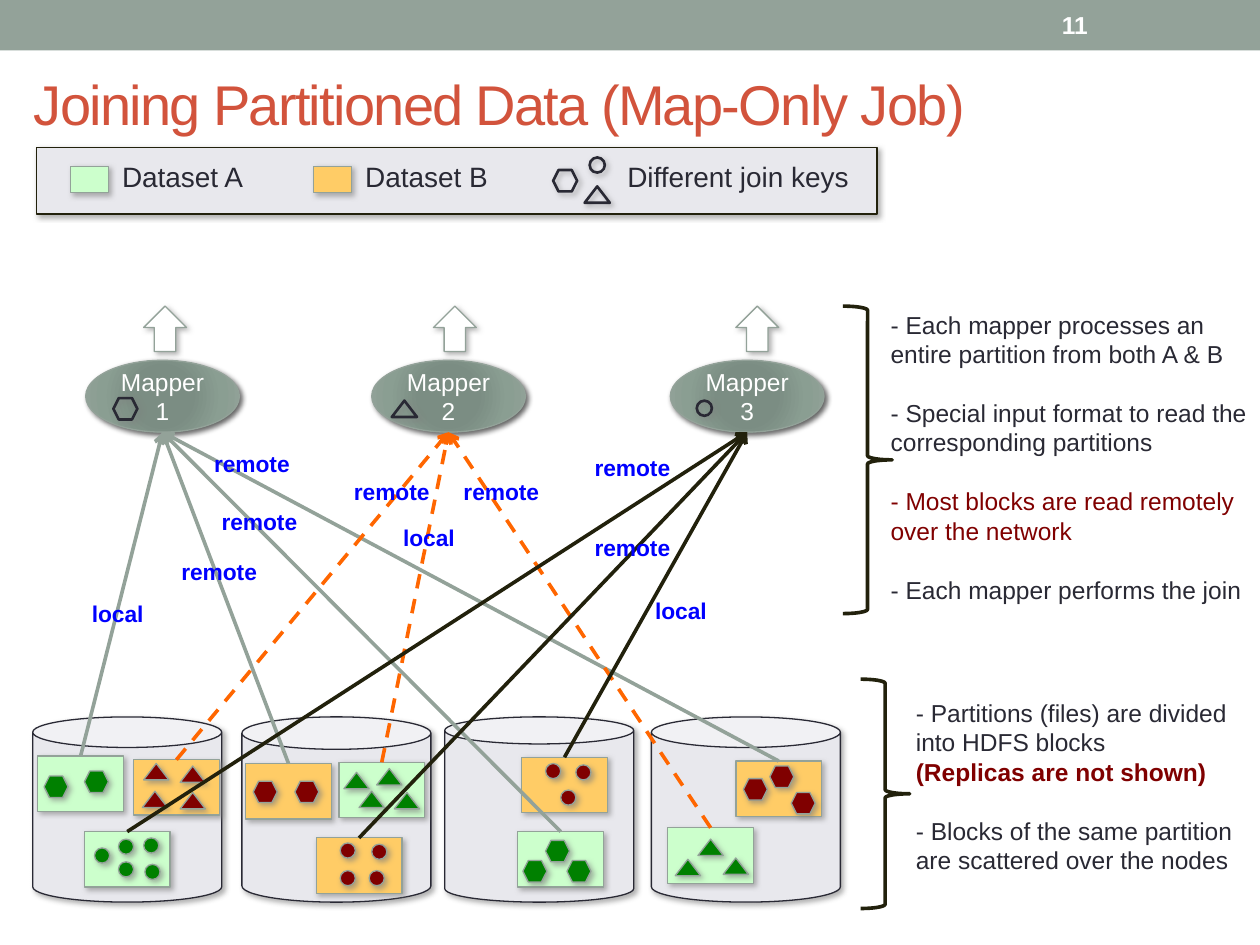
from pptx import Presentation
from pptx.dml.color import RGBColor
from pptx.enum.dml import MSO_LINE
from pptx.enum.shapes import MSO_CONNECTOR, MSO_SHAPE
from pptx.enum.text import MSO_ANCHOR, PP_ALIGN
from pptx.oxml import parse_xml
from pptx.oxml.ns import nsdecls, qn
from pptx.util import Inches, Pt

GRAY, DARK, INK = "93A299", "22210C", "292934"
PANEL, MAROON, WHITE = "E8E8ED", "800000", "FFFFFF"
DATASETS = {"A": ("CCFFCC", "008000"), "B": ("FFCC66", MAROON)}
HEX, TRI, DOT = MSO_SHAPE.HEXAGON, MSO_SHAPE.ISOSCELES_TRIANGLE, MSO_SHAPE.OVAL
KEY_SIZES = {HEX: (0.19, 0.17), TRI: (0.2, 0.13), DOT: (0.12, 0.12)}

prs = Presentation()
prs.slide_width, prs.slide_height = Inches(10), Inches(7.5)
slide = prs.slides.add_slide(prs.slide_layouts[6])


def add_shape(kind, x, y, w, h, fill=None, line=GRAY, width=0.75, shadow="808080"):
    """Draw a preset shape; None leaves out its fill, line or shadow."""
    s = slide.shapes.add_shape(kind, Inches(x), Inches(y), Inches(w), Inches(h))
    if fill:
        s.fill.solid()
        s.fill.fore_color.rgb = RGBColor.from_string(fill)
    else:
        s.fill.background()
    if line:
        s.line.color.rgb = RGBColor.from_string(line)
        s.line.width = Pt(width)
    else:
        s.line.fill.background()
    s.shadow.inherit = False
    if shadow:
        s._element.spPr.find(qn("a:effectLst")).append(parse_xml(
            f'<a:outerShdw {nsdecls("a")} blurRad="38100" dist="25400" dir="2700000" '
            f'rotWithShape="0"><a:srgbClr val="{shadow}"><a:alpha val="60000"/>'
            '</a:srgbClr></a:outerShdw>'))
    return s


def add_text(x, y, w, h, paragraphs, size, bold=False, wrap=True, anchor=MSO_ANCHOR.TOP):
    """Add a text box from (text, colour) pairs and return its text frame."""
    tf = slide.shapes.add_textbox(Inches(x), Inches(y), Inches(w), Inches(h)).text_frame
    tf.word_wrap = wrap
    tf.vertical_anchor = anchor
    for i, (text, color) in enumerate(paragraphs):
        p = tf.paragraphs[0] if i == 0 else tf.add_paragraph()
        p.text = text
        p.font.name = "Arial"
        p.font.size = Pt(size)
        p.font.bold = bold
        p.font.color.rgb = RGBColor.from_string(color)
    return tf


# Header, slide number and title
add_shape(MSO_SHAPE.RECTANGLE, 0, 0, 10, 0.4, GRAY, None, shadow=None)
add_text(8.33, 0.02, 1.17, 0.36, [("11", WHITE)], 14, True, anchor=MSO_ANCHOR.MIDDLE)
tf = add_text(0.17, 0.54, 9.02, 0.55,
              [("Joining Partitioned Data (Map-Only Job)", "D2533C")], 32,
              anchor=MSO_ANCHOR.MIDDLE)
tf.paragraphs[0].runs[0]._r.get_or_add_rPr().set("spc", "-100")

# Legend
add_shape(MSO_SHAPE.RECTANGLE, 0.29, 1.17, 6.67, 0.53, PANEL, DARK, 1)
for name, x in (("A", 0.56), ("B", 2.49)):
    add_shape(MSO_SHAPE.RECTANGLE, x, 1.32, 0.3, 0.21, DATASETS[name][0])
    add_text(x + 0.31, 1.22, 1.18, 0.37, [(f"Dataset {name}", INK)], 16, wrap=False)
add_text(4.88, 1.22, 1.98, 0.37, [("Different join keys", INK)], 16, wrap=False)
for key, x, y in ((TRI, 4.64, 1.48), (HEX, 4.39, 1.35), (DOT, 4.68, 1.25)):
    add_shape(key, x, y, *KEY_SIZES[key], line=INK, width=1.5)

# Storage nodes
for x, rim in ((0.26, 0.165), (1.92, 0.175), (3.53, 0.146), (5.17, 0.165)):
    s = add_shape(MSO_SHAPE.CAN, x, 5.69, 1.5, 1.47, PANEL, INK)
    s.adjustments[0] = rim

# Blocks: left, top, dataset, join key, places of the keys
BLOCK_W, BLOCK_H = 0.68, 0.44
blocks = [
    (0.3, 6, "A", HEX, [(0.35, 6.16), (0.67, 6.12)]),
    (1.95, 6.06, "B", HEX, [(2.34, 6.2), (2.01, 6.2)]),
    (4.11, 6.6, "A", HEX, [(4.15, 6.83), (4.33, 6.67), (4.5, 6.83)]),
    (5.84, 6.04, "B", HEX, [(6.11, 6.08), (5.9, 6.18), (6.28, 6.29)]),
    (1.06, 6.03, "B", TRI, [(1.13, 6.28), (1.14, 6.06), (1.43, 6.08), (1.43, 6.29)]),
    (2.69, 6.05, "A", TRI, [(3.13, 6.29), (2.85, 6.28), (2.99, 6.1), (2.73, 6.13)]),
    (5.3, 6.57, "A", TRI, [(5.74, 6.81), (5.36, 6.82), (5.54, 6.66)]),
    (0.67, 6.6, "A", DOT,
     [(0.75, 6.73), (0.94, 6.84), (1.15, 6.86), (0.94, 6.66), (1.14, 6.65)]),
    (4.14, 6.01, "B", DOT, [(4.33, 6.06), (4.57, 6.07), (4.45, 6.27)]),
    (2.51, 6.65, "B", DOT, [(2.7, 6.69), (2.95, 6.7), (2.7, 6.91), (2.93, 6.91)]),
]
for left, top, dataset, key, places in blocks:
    block_color, key_color = DATASETS[dataset]
    add_shape(MSO_SHAPE.RECTANGLE, left, top, BLOCK_W, BLOCK_H, block_color)
    for x, y in places:
        add_shape(key, x, y, *KEY_SIZES[key], fill=key_color)

# Mappers: left, join key, place of the key, left of the output arrow
MAPPER_W, MAPPER_TOP, MAPPER_H = 1.22, 2.86, 0.57
mappers = [
    (0.68, HEX, (0.9, 3.16), 1.14),
    (2.95, TRI, (3.11, 3.18), 3.44),
    (5.32, DOT, (5.53, 3.18), 5.84),
]
stops = "".join(f'<a:gs pos="{pos}000"><a:srgbClr val="{color}"/></a:gs>' for pos, color in
                ((0, "7B8E82"), (34, "7B8D83"), (70, "8A9E92"), (100, GRAY)))
for number, (left, key, place, arrow_left) in enumerate(mappers, 1):
    s = add_shape(MSO_SHAPE.OVAL, left, MAPPER_TOP, MAPPER_W, MAPPER_H, shadow="000000")
    spPr = s._element.spPr
    spPr.replace(spPr.find(qn("a:noFill")), parse_xml(
        f'<a:gradFill {nsdecls("a")} rotWithShape="1"><a:gsLst>{stops}</a:gsLst>'
        '<a:path path="circle"><a:fillToRect l="100000" t="100000" r="100000" b="100000"/>'
        '</a:path></a:gradFill>'))
    tf = s.text_frame
    tf.word_wrap = True
    tf.vertical_anchor = MSO_ANCHOR.MIDDLE
    p = tf.paragraphs[0]
    p.text = f"Mapper {number}"
    p.alignment = PP_ALIGN.CENTER
    p.font.name = "Arial"
    p.font.size = Pt(14)
    p.font.color.rgb = RGBColor.from_string(WHITE)
    add_shape(MSO_SHAPE.UP_ARROW, arrow_left, 2.43, 0.34, 0.36, WHITE)

# Each block feeds the mapper that has its join key
LINE_COLORS = {HEX: GRAY, TRI: "FF6600", DOT: DARK}
mapper_lefts = {key: left for left, key, _, _ in mappers}
for left, top, _, key, _ in blocks:
    s = slide.shapes.add_connector(
        MSO_CONNECTOR.STRAIGHT, Inches(left + BLOCK_W / 2), Inches(top),
        Inches(mapper_lefts[key] + MAPPER_W / 2), Inches(MAPPER_TOP + MAPPER_H))
    s.line.color.rgb = RGBColor.from_string(LINE_COLORS[key])
    s.line.width = Pt(2.08)
    if key == TRI:
        s.line.dash_style = MSO_LINE.DASH
    s.line._get_or_add_ln().append(parse_xml(f'<a:tailEnd {nsdecls("a")} type="arrow"/>'))
    s._element.spPr.append(parse_xml(f'<a:effectLst {nsdecls("a")}/>'))
for _, key, place, _ in mappers:
    add_shape(key, *place, *KEY_SIZES[key], line=INK, width=1.5)

# Read labels
labels = {
    ("local", 0.62): [(5.1, 4.69), (3.1, 4.11), (0.63, 4.71)],
    ("remote", 0.81): [(1.34, 4.38), (1.66, 3.98), (1.6, 3.52), (2.71, 3.74),
                       (3.58, 3.74), (4.62, 3.55), (4.62, 4.19)],
}
for (word, w), places in labels.items():
    for x, y in places:
        add_text(x, y, w, 0.32, [(word, "0000FF")], 13, True, wrap=False)

# Notes with braces
for x, y, h in ((6.69, 2.43, 2.44), (6.83, 5.39, 1.82)):
    add_shape(MSO_SHAPE.RIGHT_BRACE, x, y, 0.39, h, line=DARK, width=2.08, shadow=None)
mapper_notes = add_text(6.97, 2.41, 3.03, 2.46, [
    ("- Each mapper processes an entire partition from both A & B", INK),
    ("- Special input format to read the corresponding partitions", INK),
    ("- Most blocks are read remotely over the network", MAROON),
    ("- Each mapper performs the join", INK)], 14)
block_notes = add_text(7.17, 5.49, 2.75, 1.75, [
    ("- Partitions (files) are divided into HDFS blocks", INK),
    ("(Replicas are not shown)", MAROON),
    ("- Blocks of the same partition are scattered over the nodes", INK)], 14)
block_notes.paragraphs[1].font.bold = True
for p in mapper_notes.paragraphs + block_notes.paragraphs:
    p.line_spacing = Pt(16.8)
for p in mapper_notes.paragraphs[1:] + block_notes.paragraphs[2:]:
    p.space_before = Pt(16.8)

prs.save("out.pptx")
